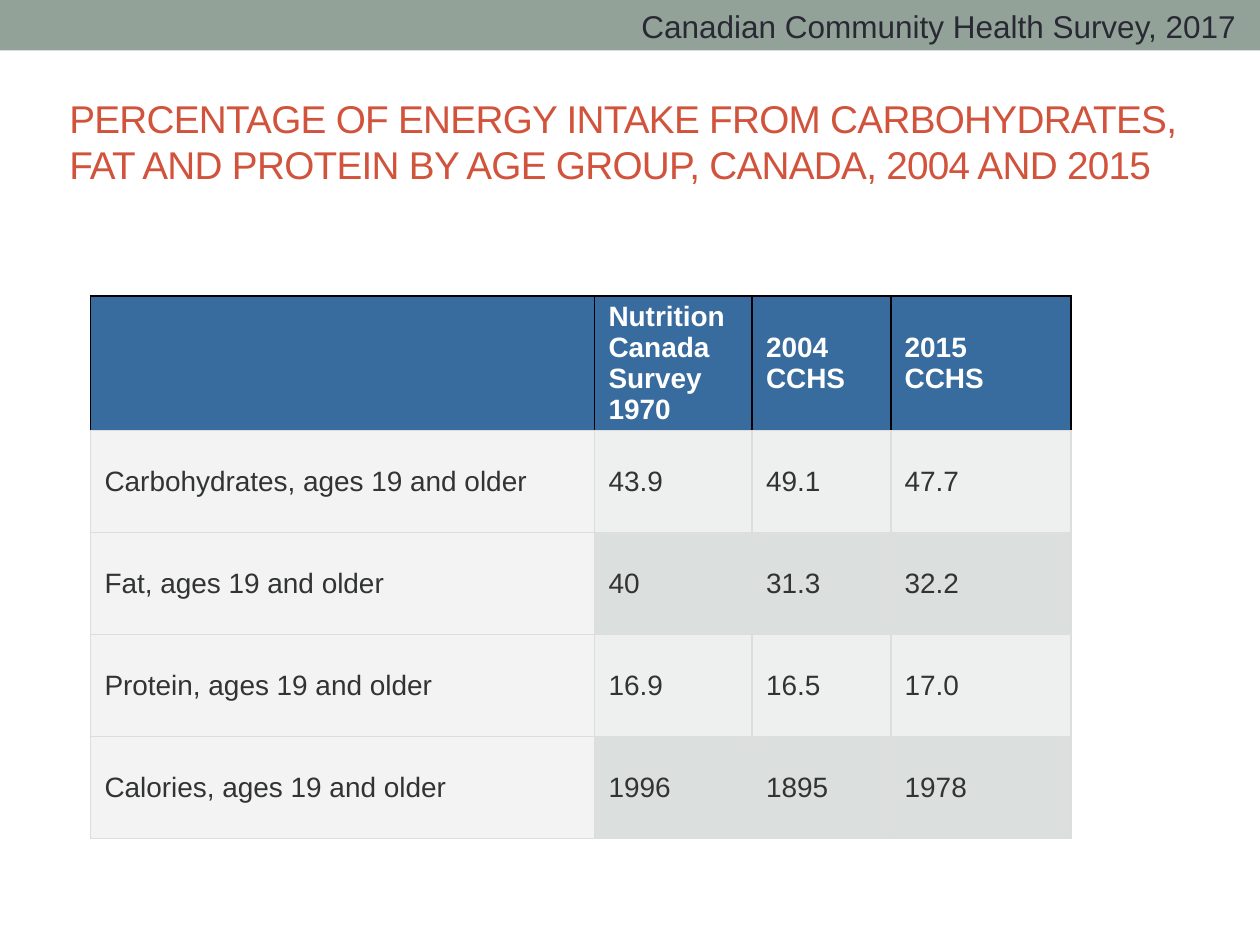
from lxml.etree import SubElement
from pptx import Presentation
from pptx.dml.color import RGBColor
from pptx.enum.shapes import MSO_SHAPE
from pptx.enum.text import MSO_ANCHOR
from pptx.oxml.ns import qn
from pptx.util import Inches, Pt

SURVEY = "Canadian Community Health Survey, 2017"
TITLE = ("PERCENTAGE OF ENERGY INTAKE FROM CARBOHYDRATES, "
         "FAT AND PROTEIN BY AGE GROUP, CANADA, 2004 AND 2015")
ROWS = [
    ("", "Nutrition Canada Survey 1970", "2004\nCCHS", "2015\nCCHS"),
    ("Carbohydrates, ages 19 and older", "43.9", "49.1", "47.7"),
    ("Fat, ages 19 and older", "40", "31.3", "32.2"),
    ("Protein, ages 19 and older", "16.9", "16.5", "17.0"),
    ("Calories, ages 19 and older", "1996", "1895", "1978"),
]
COL_WIDTHS = [4, 1.25, 1.1, 1.43]
ROW_HEIGHTS = [1] + [0.81] * 4

THEME = {
    "font": "Arial",
    "size": {"title": 22.1, "survey": 18, "table": 16},
    "band": "93A299", "title": "D2533C", "survey": "292934",
    "header": "386B9E", "header_text": "FFFFFF", "header_line": "000000",
    "label": "F3F3F3", "stripes": ("EEF0EF", "DBDFDD"),
    "body_text": "323333", "line": "DDDDDD",
}


def rgb(key):
    return RGBColor.from_string(THEME[key])


def add_text(tf, text, size, color, bold=False):
    """Write text into the first paragraph, one run per line."""
    p = tf.paragraphs[0]
    for i, line in enumerate(text.split("\n")):
        if i:
            p.add_line_break()
        r = p.add_run()
        r.text = line
        r.font.name = THEME["font"]
        r.font.size = Pt(THEME["size"][size])
        r.font.bold = bold
        r.font.color.rgb = rgb(color)
    return p


def add_box(s, box, wrap, anchor):
    tf = s.shapes.add_textbox(*map(Inches, box)).text_frame
    tf.word_wrap = wrap
    tf.vertical_anchor = anchor
    tf.margin_left = tf.margin_right = Inches(0.05)
    tf.margin_top = tf.margin_bottom = Inches(0.05)
    return tf


def set_borders(cell, side_color, bottom_color):
    """Put 1 pt lines ahead of the fill, as the schema orders them."""
    tc_pr = cell._tc.get_or_add_tcPr()
    for i, side in enumerate("LRTB"):
        ln = SubElement(tc_pr, qn(f"a:ln{side}"), w=str(Pt(1)))
        fill = SubElement(ln, qn("a:solidFill"))
        color = bottom_color if side == "B" else side_color
        SubElement(fill, qn("a:srgbClr"), val=THEME[color])
        tc_pr.insert(i, ln)


def style_cell(cell, row, col, text):
    header, label = row == 0, col == 0
    cell.vertical_anchor = MSO_ANCHOR.MIDDLE
    cell.margin_left = cell.margin_right = Inches(0.11)
    cell.margin_top = cell.margin_bottom = Inches(0.08 if label and not header else 0)
    cell.fill.solid()
    if header:
        cell.fill.fore_color.rgb = rgb("header")
    elif label:
        cell.fill.fore_color.rgb = rgb("label")
    else:
        stripe = THEME["stripes"][(row - 1) % 2]
        cell.fill.fore_color.rgb = RGBColor.from_string(stripe)
    set_borders(cell, "header_line" if header else "line", "line")
    if text:
        add_text(cell.text_frame, text, "table",
                 "header_text" if header else "body_text", header)


def add_energy_table(s, left, top):
    size = sum(COL_WIDTHS), sum(ROW_HEIGHTS)
    table = s.shapes.add_table(len(ROWS), len(COL_WIDTHS),
                               *map(Inches, (left, top, *size))).table
    for col, width in zip(table.columns, COL_WIDTHS):
        col.width = Inches(width)
    for row, height in zip(table.rows, ROW_HEIGHTS):
        row.height = Inches(height)
    for i, texts in enumerate(ROWS):
        for j, text in enumerate(texts):
            style_cell(table.cell(i, j), i, j, text)


def main():
    prs = Presentation()
    prs.slide_width, prs.slide_height = Inches(10), Inches(7.5)
    s = prs.slides.add_slide(prs.slide_layouts[6])

    band = s.shapes.add_shape(MSO_SHAPE.RECTANGLE, 0, 0, prs.slide_width, Inches(0.4))
    band.shadow.inherit = False
    band.fill.solid()
    band.fill.fore_color.rgb = rgb("band")
    band.line.fill.background()

    title = add_box(s, (0.5, 0.58, 9, 1.08), True, MSO_ANCHOR.MIDDLE)
    p = add_text(title, TITLE, "title", "title")
    p.runs[0].font._element.set("spc", "-40")

    add_energy_table(s, 0.72, 2.35)

    survey = add_box(s, (5.04, 0.01, 4.83, 0.38), False, MSO_ANCHOR.TOP)
    add_text(survey, SURVEY, "survey", "survey")

    prs.save("out.pptx")


if __name__ == "__main__":
    main()
